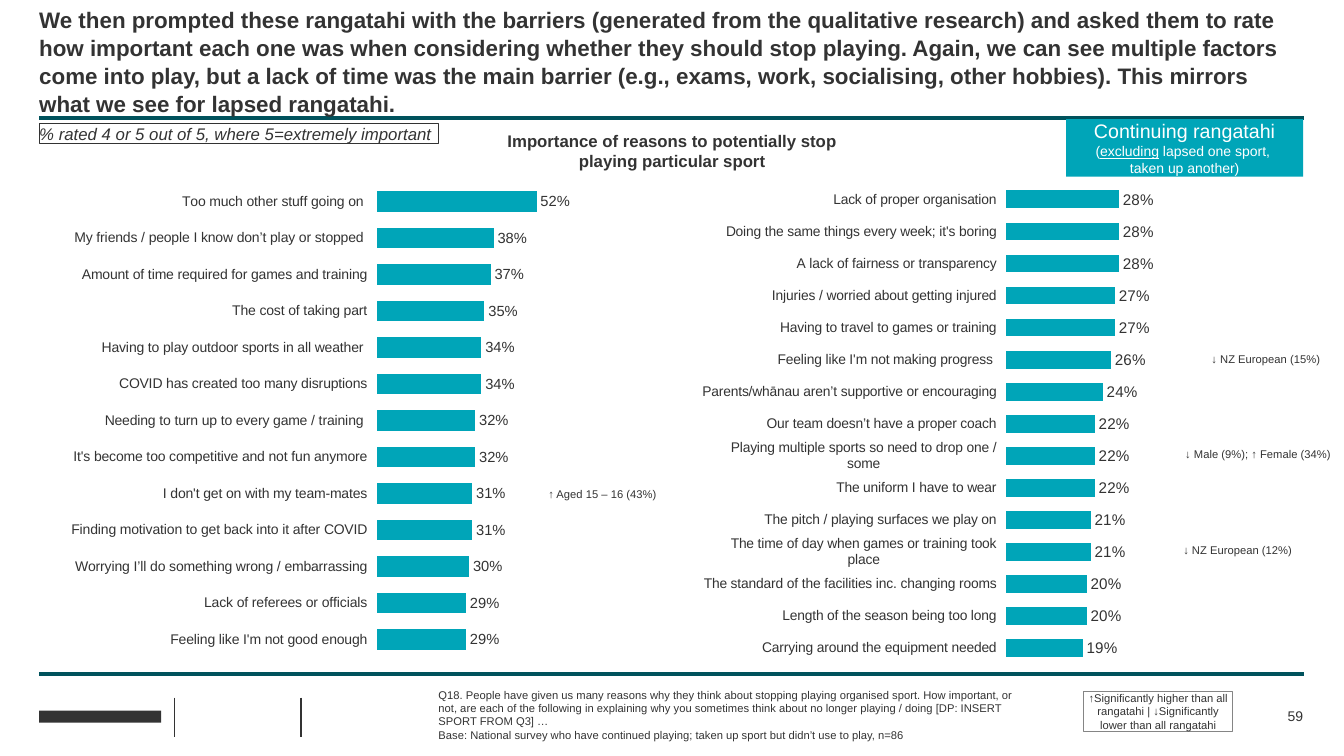
"""Build the slide on reasons why rangatahi might stop playing a sport."""
from lxml import etree
from pptx import Presentation
from pptx.chart.data import CategoryChartData
from pptx.dml.color import RGBColor
from pptx.enum.chart import XL_CHART_TYPE, XL_LABEL_POSITION, XL_TICK_MARK
from pptx.enum.shapes import MSO_CONNECTOR, MSO_SHAPE
from pptx.enum.text import MSO_ANCHOR, MSO_AUTO_SIZE, PP_ALIGN
from pptx.oxml.ns import qn
from pptx.util import Cm, Pt

TEAL = RGBColor(0x00, 0xA5, 0xB8)
DEEP = RGBColor(0x00, 0x52, 0x5C)
DARK = RGBColor(0x33, 0x33, 0x33)
GREY = RGBColor(0x85, 0x85, 0x85)
WHITE = RGBColor(0xFF, 0xFF, 0xFF)
BARS = XL_CHART_TYPE.BAR_CLUSTERED
OUTER = XL_LABEL_POSITION.OUTSIDE_END
TICK = XL_TICK_MARK.OUTSIDE
STRAIGHT = MSO_CONNECTOR.STRAIGHT
RECT = MSO_SHAPE.RECTANGLE
TOP, MID = MSO_ANCHOR.TOP, MSO_ANCHOR.MIDDLE
GROW, FIXED = MSO_AUTO_SIZE.SHAPE_TO_FIT_TEXT, MSO_AUTO_SIZE.NONE
LEFT, MIDDLE, RIGHT = PP_ALIGN.LEFT, PP_ALIGN.CENTER, PP_ALIGN.RIGHT

MAIN = [
    ("Too much other stuff going on ", 0.52),
    ("My friends / people I know don’t play or stopped ", 0.38),
    ("Amount of time required for games and training", 0.37),
    ("The cost of taking part", 0.35),
    ("Having to play outdoor sports in all weather ", 0.34),
    ("COVID has created too many disruptions", 0.34),
    ("Needing to turn up to every game / training ", 0.32),
    ("It's become too competitive and not fun anymore", 0.32),
    ("I don't get on with my team-mates", 0.31),
    ("Finding motivation to get back into it after COVID", 0.31),
    ("Worrying I’ll do something wrong / embarrassing", 0.30),
    ("Lack of referees or officials", 0.29),
    ("Feeling like I'm not good enough", 0.29),
]
MINOR = [
    ("Lack of proper organisation", 0.28),
    ("Doing the same things every week; it's boring", 0.28),
    ("A lack of fairness or transparency", 0.28),
    ("Injuries / worried about getting injured", 0.27),
    ("Having to travel to games or training", 0.27),
    ("Feeling like I'm not making progress ", 0.26),
    ("Parents/whānau aren’t supportive or encouraging ", 0.24),
    ("Our team doesn’t have a proper coach", 0.22),
    ("Playing multiple sports so need to drop one / some", 0.22),
    ("The uniform I have to wear", 0.22),
    ("The pitch / playing surfaces we play on", 0.21),
    ("The time of day when games or training took place", 0.21),
    ("The standard of the facilities inc. changing rooms", 0.20),
    ("Length of the season being too long", 0.20),
    ("Carrying around the equipment needed", 0.19),
]
NOTES = [
    (29.82, 13.69, "↓ NZ European (12%)"),
    (30.53, 8.89, "↓ NZ European (15%)"),
    (13.82, 12.29, "↑ Aged 15 – 16 (43%)"),
    (29.87, 11.28, "↓ Male (9%); ↑ Female (34%)"),
]
RULES = [
    (0.99, 16.99, 32.87, 16.99, DEEP, 3),
    (4.39, 17.58, 4.39, 18.57, DARK, 1),
    (7.59, 17.58, 7.59, 18.57, DARK, 1),
    (0.99, 2.97, 32.87, 2.97, DEEP, 3),
]


def put(item, **vals):
    for name, val in vals.items():
        setattr(item, name, val)


class Deck:
    def __init__(self):
        self.file = Presentation()
        put(self.file, slide_width=Cm(33.87), slide_height=Cm(19.05))
        self.slide = self.file.slides.add_slide(self.file.slide_layouts[6])
        self.shapes = self.slide.shapes
        self.face = "Arial"

    def font(self, font, size, color=DARK, **more):
        put(font, name=self.face, size=Pt(size), **more)
        font.color.rgb = color

    def rule(self, x1, y1, x2, y2, color, width):
        line = self.shapes.add_connector(STRAIGHT, Cm(x1), Cm(y1), Cm(x2), Cm(y2))
        line.line.color.rgb = color
        line.line.width = Pt(width)
        etree.SubElement(line.element.spPr, qn("a:effectLst"))

    def rect(self, place, fill=None, edge=None):
        box = self.shapes.add_shape(RECT, *map(Cm, place))
        box.shadow.inherit = False
        if fill is None:
            box.fill.background()
        else:
            box.fill.solid()
            box.fill.fore_color.rgb = fill
        if edge is None:
            box.line.fill.background()
        else:
            box.line.color.rgb = edge
            box.line.width = Pt(0.75)
        return box

    def text(self, place, paras, size, box=None, color=DARK, align=LEFT,
             anchor=TOP, fit=GROW, space=None, **more):
        box = box or self.shapes.add_textbox(*map(Cm, place))
        frame = box.text_frame
        put(frame, word_wrap=True, auto_size=fit, vertical_anchor=anchor,
            margin_left=0, margin_top=0, margin_right=0, margin_bottom=0)
        for num, runs in enumerate(paras):
            para = frame.add_paragraph() if num else frame.paragraphs[0]
            put(para, alignment=align, line_spacing=space)
            for words, style in runs:
                run = para.add_run()
                run.text = words
                self.font(run.font, **{"size": size, "color": color, **more, **style})

    def plain(self, place, *lines, **opts):
        self.text(place, [[(line, {})] for line in lines], **opts)

    def panel(self, place, paras, fill=None, edge=None, **opts):
        self.text(place, paras, box=self.rect(place, fill, edge), **opts)

    def chart(self, place, rows, left, width, size):
        data = CategoryChartData(number_format="0%")
        names, vals = zip(*reversed(rows))
        data.categories = names
        data.add_series("Series 1", vals)
        chart = self.shapes.add_chart(BARS, *map(Cm, place), data).chart
        put(chart, has_legend=False, has_title=False)
        self.font(chart.font, 12)
        cat, val = chart.category_axis, chart.value_axis
        put(cat, major_tick_mark=TICK, has_major_gridlines=False)
        cat.format.line.fill.background()
        self.font(cat.tick_labels.font, 10)
        put(val, minimum_scale=0, maximum_scale=1, has_major_gridlines=False,
            visible=False)
        plot = chart.plots[0]
        put(plot, gap_width=80, overlap=-10, vary_by_categories=False,
            has_data_labels=True)
        tags = plot.data_labels
        put(tags, show_value=True, number_format="0%",
            number_format_is_linked=False, position=OUTER)
        self.font(tags.font, size)
        fill = plot.series[0].format.fill
        fill.solid()
        fill.fore_color.rgb = TEAL
        self.frame(chart, left, width)

    def frame(self, chart, left, width):
        area = chart.element.xpath("c:chart/c:plotArea")[0]
        for old in area.findall(qn("c:layout")):
            area.remove(old)
        layout = etree.Element(qn("c:layout"))
        area.insert(0, layout)
        manual = etree.SubElement(layout, qn("c:manualLayout"))
        parts = {"layoutTarget": "inner", "xMode": "edge", "yMode": "edge",
                 "x": left, "y": 0, "w": width, "h": 1}
        for name, val in parts.items():
            etree.SubElement(manual, qn("c:" + name)).set("val", str(val))


def main():
    deck = Deck()
    for rule in RULES:
        deck.rule(*rule)
    deck.rect((0.99, 17.91, 3.07, 0.3), fill=DARK)
    deck.plain(
        (0.99, 0.13, 31.85, 1.12),
        "We then prompted these rangatahi with the barriers (generated from the qualitative research) and asked them to rate how important each one was when considering whether they should stop playing. Again, we can see multiple factors come into play, but a lack of time was the main barrier (e.g., exams, work, socialising, other hobbies). This mirrors what we see for lapsed rangatahi.",
        size=16, bold=True, fit=FIXED, space=1.04)
    deck.chart((-0.79, 4.62, 19.61, 11.96), MAIN, 0.525, 0.394, 10.5)
    deck.chart((17.7, 4.62, 17.81, 12.12), MINOR, 0.422, 0.578, 11)
    deck.panel(
        (26.87, 3, 5.97, 1.45),
        [[("Continuing rangatahi ", {"size": 14}), ("(", {}),
          ("excluding", {"underline": True}), (" lapsed one sport, ", {})],
         [("taken up another)", {})]],
        fill=TEAL, size=10, color=WHITE, align=MIDDLE)
    deck.panel(
        (0.99, 3.12, 10.06, 0.51),
        [[("% rated 4 or 5 out of 5, where 5=extremely important", {})]],
        edge=DARK, size=12, italic=True)
    deck.plain(
        (11.05, 17.91, 14.99, 0.2),
        "Q18. People have given us many reasons why they think about stopping playing organised sport. How important, or not, are each of the following in explaining why you sometimes think about no longer playing / doing [DP: INSERT SPORT FROM Q3] …",
        "Base: National survey who have continued playing; taken up sport but didn’t use to play, n=86",
        size=8, anchor=MID, fit=FIXED)
    deck.plain(
        (12.52, 3.3, 8.84, 1.02),
        "Importance of reasons to potentially stop playing particular sport",
        size=12, bold=True, align=MIDDLE)
    for left, top, words in NOTES:
        deck.plain((left, top, 6.78, 0.33), words, size=8)
    deck.panel(
        (27.31, 17.42, 3.76, 1.02),
        [[("↑Significantly higher than all rangatahi | ↓Significantly lower than all rangatahi", {})]],
        edge=GREY, size=8, align=MIDDLE)
    deck.plain((30.15, 17.75, 2.69, 0.56), "59", size=10, align=RIGHT,
               anchor=MID, fit=FIXED)
    deck.file.save("out.pptx")


if __name__ == "__main__":
    main()
